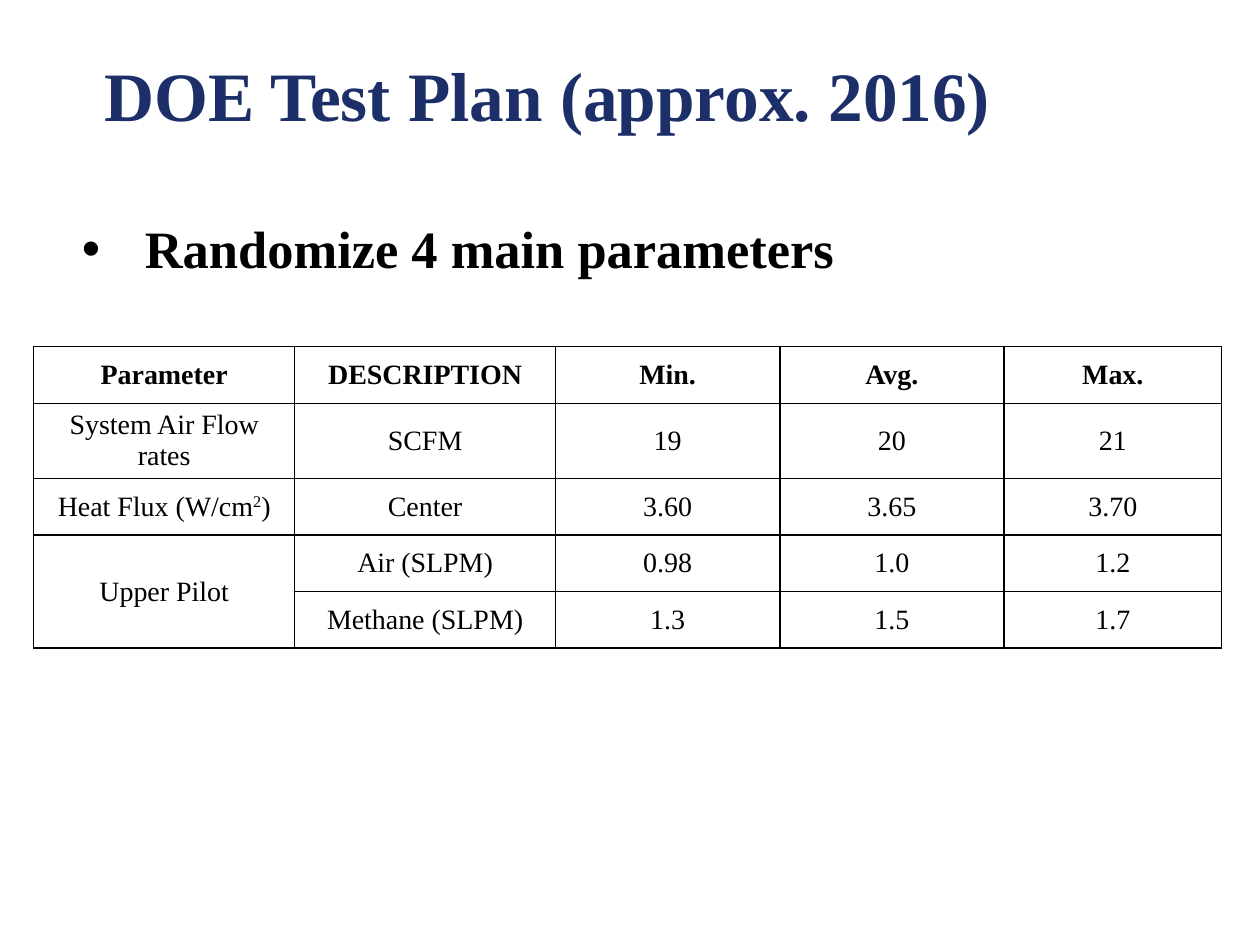
from lxml import etree
from pptx import Presentation
from pptx.dml.color import RGBColor
from pptx.enum.text import MSO_ANCHOR, PP_ALIGN
from pptx.oxml.ns import qn
from pptx.util import Cm, Pt

FONT = "Times New Roman"
NAVY = "1D2F68"
BLACK = "000000"

COLUMN_WIDTHS = [5.26, 5.26, 4.52, 4.52, 4.39]
ROW_HEIGHTS = [1.14, 1.52, 1.14, 1.14, 1.14]
# A cell is a list of runs where part of it is superscript: (text, raised).
HEAT_FLUX = [("Heat Flux (W/cm", False), ("2", True), (")", False)]
ROWS = [
    ["Parameter", "DESCRIPTION", "Min.", "Avg.", "Max."],
    ["System Air Flow rates", "SCFM", "19", "20", "21"],
    [HEAT_FLUX, "Center", "3.60", "3.65", "3.70"],
    ["Upper Pilot", "Air (SLPM)", "0.98", "1.0", "1.2"],
    ["", "Methane (SLPM)", "1.3", "1.5", "1.7"],
]


def color(hex_string):
    return RGBColor.from_string(hex_string)


def format_font(font, size, hex_string, bold):
    font.name = FONT
    font.size = Pt(size)
    font.bold = bold
    font.color.rgb = color(hex_string)


def add_text(slide, box, text, size, hex_string):
    shape = slide.shapes.add_textbox(*(Cm(length) for length in box))
    text_frame = shape.text_frame
    text_frame.word_wrap = True
    text_frame.text = text
    format_font(text_frame.paragraphs[0].runs[0].font, size, hex_string, True)
    return text_frame


def add_title(slide, box):
    text_frame = add_text(slide, box, "DOE Test Plan (approx. 2016)", 39.6, NAVY)
    text_frame.vertical_anchor = MSO_ANCHOR.MIDDLE


def add_bullet_line(slide, box):
    text_frame = add_text(slide, box, "Randomize 4 main parameters", 30, BLACK)
    properties = text_frame.paragraphs[0]._p.get_or_add_pPr()
    properties.set("marL", str(Cm(1.27)))
    properties.set("indent", str(-Cm(1.27)))
    etree.SubElement(properties, qn("a:buFont"), typeface="Arial")
    etree.SubElement(properties, qn("a:buChar"), char="•")


def set_borders(cell, hex_string, width):
    properties = cell._tc.get_or_add_tcPr()
    for index, side in enumerate(("lnL", "lnR", "lnT", "lnB")):
        line = etree.Element(qn(f"a:{side}"), w=str(Pt(width)))
        fill = etree.SubElement(line, qn("a:solidFill"))
        etree.SubElement(fill, qn("a:srgbClr"), val=hex_string)
        properties.insert(index, line)


def fill_cell(cell, content, bold):
    cell.fill.background()
    set_borders(cell, BLACK, 1)
    cell.vertical_anchor = MSO_ANCHOR.MIDDLE
    cell.margin_left = cell.margin_right = Cm(0.18)
    cell.margin_top = cell.margin_bottom = 0
    paragraph = cell.text_frame.paragraphs[0]
    paragraph.alignment = PP_ALIGN.CENTER
    parts = [(content, False)] if isinstance(content, str) else content
    for text, raised in parts:
        if not text:
            continue
        run = paragraph.add_run()
        run.text = text
        format_font(run.font, 16, BLACK, bold)
        if raised:
            run._r.get_or_add_rPr().set("baseline", "30000")


def add_parameter_table(slide, left, top):
    size = Cm(sum(COLUMN_WIDTHS)), Cm(sum(ROW_HEIGHTS))
    frame = slide.shapes.add_table(
        len(ROWS), len(COLUMN_WIDTHS), Cm(left), Cm(top), *size
    )
    table = frame.table
    table.horz_banding = False
    for column, width in zip(table.columns, COLUMN_WIDTHS):
        column.width = Cm(width)
    for row, height in zip(table.rows, ROW_HEIGHTS):
        row.height = Cm(height)
    for row_index, contents in enumerate(ROWS):
        for column_index, content in enumerate(contents):
            cell = table.cell(row_index, column_index)
            fill_cell(cell, content, bold=row_index == 0)
    table.cell(3, 0).merge(table.cell(4, 0))


def main():
    presentation = Presentation()
    presentation.slide_width = Cm(25.4)
    presentation.slide_height = Cm(19.05)
    slide = presentation.slides.add_slide(presentation.slide_layouts[6])
    add_bullet_line(slide, (1.4, 4.24, 22.66, 1.55))
    add_title(slide, (1.85, 1.04, 23.55, 1.7))
    add_parameter_table(slide, 0.68, 6.99)
    presentation.save("out.pptx")


if __name__ == "__main__":
    main()
